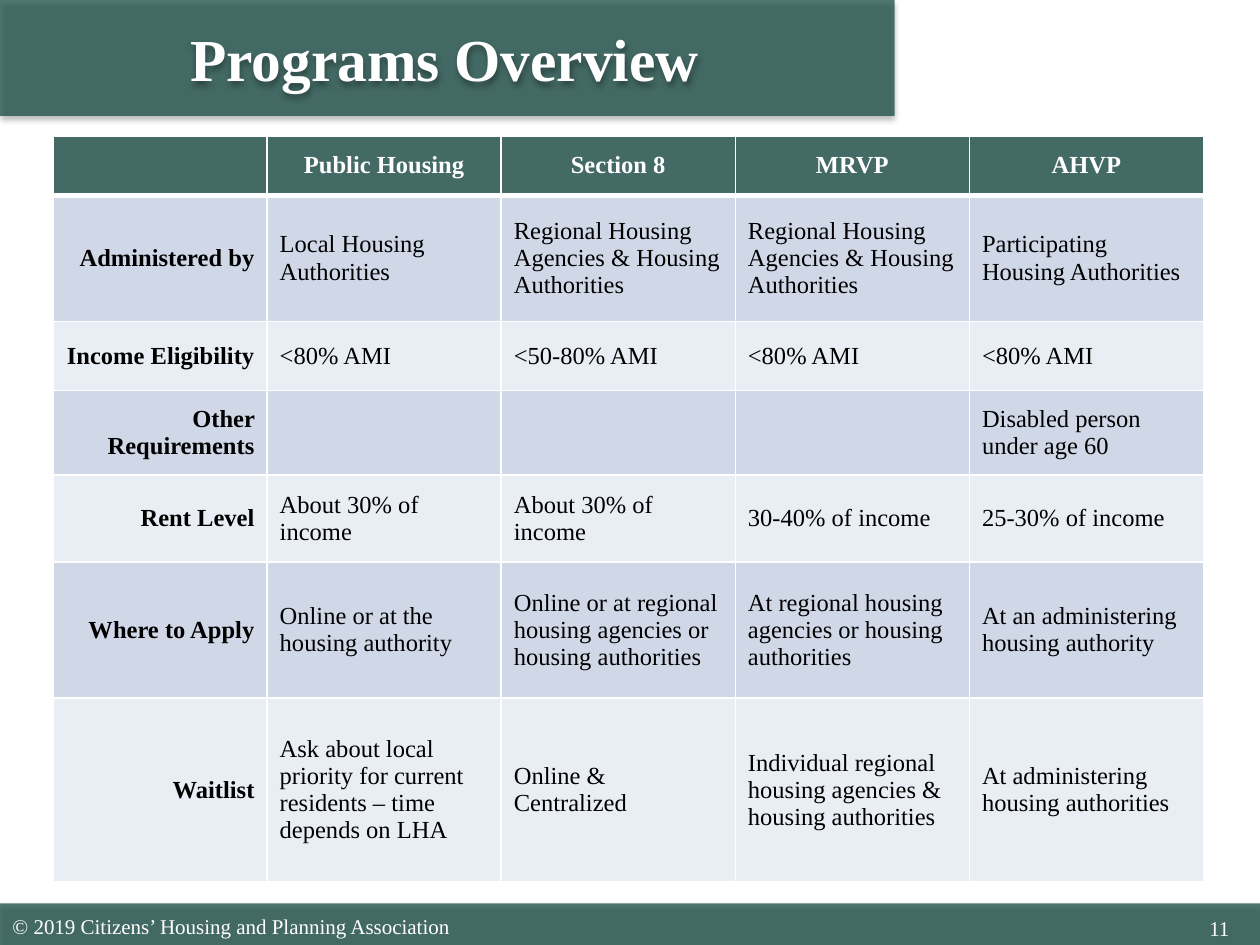
from lxml.etree import SubElement
from pptx import Presentation
from pptx.dml.color import RGBColor as RGB
from pptx.enum.shapes import MSO_SHAPE as SHAPE
from pptx.enum.text import MSO_ANCHOR as ANCHOR, PP_ALIGN as ALIGN
from pptx.oxml.ns import qn
from pptx.util import Inches, Pt

COLORS = {
    "bar": "22534D",
    "header": "446A65",
    "band": "D0D8E8",
    "light": "E9EDF4",
    "white": "FFFFFF",
    "black": "000000",
}
FONT = "Times New Roman"
GRID_COLS, GRID_ROWS = 100, 75
COL_WIDTHS = [17] + [18.58] * 4
ROW_HEIGHTS = [4.7, 10, 5.5, 6.7, 6.9, 10.8, 14.6]
PROGRAMS = [
    ["", "Public Housing", "Section 8", "MRVP", "AHVP"],
    ["Administered by", "Local Housing Authorities",
     "Regional Housing Agencies & Housing Authorities",
     "Regional Housing Agencies & Housing Authorities",
     "Participating Housing Authorities"],
    ["Income Eligibility", "<80% AMI", "<50-80% AMI", "<80% AMI", "<80% AMI"],
    ["Other Requirements", "", "", "", "Disabled person under age 60"],
    ["Rent Level", "About 30% of income", "About 30% of income",
     "30-40% of income", "25-30% of income"],
    ["Where to Apply", "Online or at the housing authority",
     "Online or at regional housing agencies or housing authorities",
     "At regional housing agencies or housing authorities",
     "At an administering housing authority"],
    ["Waitlist",
     "Ask about local priority for current residents – time depends on LHA",
     "Online & Centralized",
     "Individual regional housing agencies & housing authorities",
     "At administering housing authorities"],
]


def rgb(name):
    return RGB.from_string(COLORS[name])


def write(tf, text, size=12, color="white", bold=False, align=ALIGN.LEFT, spacing=None):
    tf.word_wrap = True
    p = tf.paragraphs[0]
    p.alignment = align
    p.line_spacing = spacing
    if text:
        r = p.add_run()
        r.text = text
        font = r.font
    else:
        font = p.font
    font.name, font.size, font.bold = FONT, Pt(size), bold
    font.color.rgb = rgb(color)


def add_shadow(sp):
    sp.shadow.inherit = False
    effects = sp._element.spPr.find(qn("a:effectLst"))
    shadow = SubElement(effects, qn("a:outerShdw"), blurRad=str(Pt(3.1)),
                        dist=str(Pt(1.8)), dir="5400000", rotWithShape="0")
    black = SubElement(shadow, qn("a:srgbClr"), val=COLORS["black"])
    SubElement(black, qn("a:alpha"), val="35000")


def add_borders(cell, bottom):
    tcPr = cell._tc.get_or_add_tcPr()
    for i, (side, width) in enumerate(zip("LRTB", (1, 1, 1, bottom))):
        line = SubElement(tcPr, qn(f"a:ln{side}"), w=str(Pt(width)))
        fill = SubElement(line, qn("a:solidFill"))
        SubElement(fill, qn("a:srgbClr"), val=COLORS["white"])
        tcPr.insert(i, line)


class Deck:
    def __init__(self, width, height):
        self.prs = Presentation()
        self.prs.slide_width, self.prs.slide_height = Inches(width), Inches(height)
        self.s = self.prs.slides.add_slide(self.prs.slide_layouts[6])

    def x(self, cols):
        return round(self.prs.slide_width * cols / GRID_COLS)

    def y(self, rows):
        return round(self.prs.slide_height * rows / GRID_ROWS)

    def box(self, left, top, width, height):
        return self.x(left), self.y(top), self.x(width), self.y(height)

    def bar(self, *at):
        sp = self.s.shapes.add_shape(SHAPE.RECTANGLE, *self.box(*at))
        sp.fill.solid()
        sp.fill.fore_color.rgb = rgb("bar")
        color = sp._element.spPr.find(qn("a:solidFill"))[0]
        SubElement(color, qn("a:alpha"), val="78000")
        sp.line.fill.background()
        add_shadow(sp)
        return sp

    def text(self, text, *at, insets=None, shadow=False, **style):
        sp = self.s.shapes.add_textbox(*self.box(*at))
        tf = sp.text_frame
        tf.vertical_anchor = ANCHOR.MIDDLE
        if insets:
            set_insets(tf, *insets)
        if shadow:
            add_shadow(sp)
        write(tf, text, **style)

    def table(self, rows, left, top):
        at = self.box(left, top, sum(COL_WIDTHS), sum(ROW_HEIGHTS))
        table = self.s.shapes.add_table(len(rows), len(rows[0]), *at).table
        for col, width in zip(table.columns, COL_WIDTHS):
            col.width = self.x(width)
        for i, (row, height) in enumerate(zip(table.rows, ROW_HEIGHTS)):
            row.height = self.y(height)
            for j, cell in enumerate(row.cells):
                self.cell(cell, rows[i][j], i, j)

    def cell(self, cell, text, i, j):
        header = i == 0
        align = ALIGN.CENTER if header else ALIGN.LEFT if j else ALIGN.RIGHT
        cell.vertical_anchor = ANCHOR.MIDDLE
        cell.fill.solid()
        cell.fill.fore_color.rgb = rgb("header" if header else "band" if i % 2 else "light")
        add_borders(cell, 3 if header else 1)
        write(cell.text_frame, text, size=14, color="white" if header else "black",
              bold=header or j == 0, align=align)


def set_insets(tf, left, top, right, bottom):
    tf.margin_left, tf.margin_top = Inches(left), Inches(top)
    tf.margin_right, tf.margin_bottom = Inches(right), Inches(bottom)


def main():
    deck = Deck(10, 7.5)
    deck.bar(0, 0, 71, 9.2)
    footer = deck.bar(0, 71.7, 100, 3.3).text_frame
    footer.vertical_anchor = ANCHOR.TOP
    set_insets(footer, 0.2, 0, 0.2, 0)
    write(footer, "11 ", align=ALIGN.RIGHT, spacing=1.5)
    deck.text("© 2019 Citizens’ Housing and Planning Association", 0, 72, 72.1, 3)
    deck.table(PROGRAMS, 4.2, 10.8)
    deck.text("Programs Overview", 0, 0, 70, 9.1, insets=(0.06, 0, 0, 0),
              shadow=True, size=34, bold=True, align=ALIGN.CENTER)
    deck.prs.save("out.pptx")


if __name__ == "__main__":
    main()
